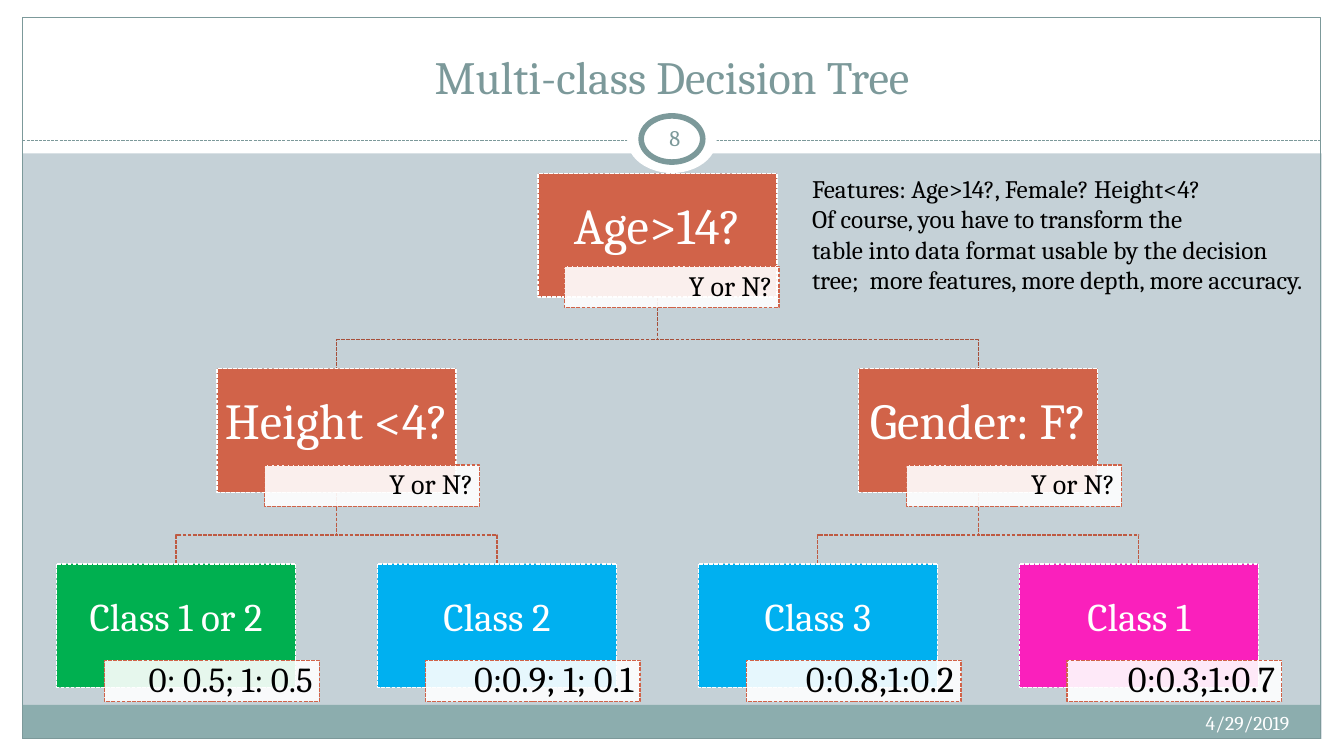
from lxml import etree
from pptx import Presentation
from pptx.dml.color import RGBColor
from pptx.enum.dml import MSO_LINE
from pptx.enum.shapes import MSO_CONNECTOR, MSO_SHAPE
from pptx.enum.text import MSO_ANCHOR, MSO_AUTO_SIZE, PP_ALIGN
from pptx.oxml.ns import qn
from pptx.util import Pt

RECTANGLE, OVAL = MSO_SHAPE.RECTANGLE, MSO_SHAPE.OVAL
LEFT, CENTER, RIGHT = PP_ALIGN.LEFT, PP_ALIGN.CENTER, PP_ALIGN.RIGHT
TOP, MIDDLE, BOTTOM = MSO_ANCHOR.TOP, MSO_ANCHOR.MIDDLE, MSO_ANCHOR.BOTTOM
DASHED = MSO_LINE.SQUARE_DOT

COLORS = {
    "background": "C5D1D7", "white": "FFFFFF", "black": "000000",
    "footer": "8CADAE", "frame": "7C999A", "question": "D16349",
    "root_link": "A74F3A", "link": "BE5A42",
    "green": "00B050", "blue": "00B0F0", "pink": "FA20BC",
}
FONT = "Cambria"
TREE_LEFT, TREE_TOP = 40.4, 124
COLUMN_STEP, ROW_STEP = 229.2, 139.4
NODE_WIDTH, NODE_HEIGHT = 170.8, 88.2
TAG_WIDTH, TAG_HEIGHT = 153.4, 29.6
ELBOW_DROP = 30.6
NODE_INSETS, TAG_INSETS = (2, 2, 2, 12), (4.6, 1, 4.6, 1)
ROOT_TAG_OFFSET, TAG_OFFSET = (18.9, 66.2), (34.2, 68.8)

NODES = [
    (1.5, 0, "question", "Age>14?", 36, "Y or N?", 20),
    (0.5, 1, "question", "Height <4?", 36, "Y or N?", 20),
    (0, 2, "green", "Class 1 or 2", 28, "0: 0.5; 1: 0.5", 25),
    (1, 2, "blue", "Class 2", 28, "0:0.9; 1; 0.1", 26),
    (2.5, 1, "question", "Gender: F?", 36, "Y or N?", 20),
    (2, 2, "blue", "Class 3", 28, "0:0.8;1:0.2", 26),
    (3, 2, "pink", "Class 1", 28, "0:0.3;1:0.7", 26),
]
BRANCHES = [
    (2.5, 1, (3, 2), "link"),
    (0.5, 1, (1, 0), "link"),
    (1.5, 0, (2.5, 0.5), "root_link"),
]
FEATURES = [
    "Features: Age>14?, Female? Height<4?",
    "Of course, you have to transform the",
    "table into data format usable by the decision",
    "tree;  more features, more depth, more accuracy.",
]


def rgb(name):
    """Return the named colour."""
    return RGBColor.from_string(COLORS[name])


def apply(target, values):
    """Set every attribute given in a dict of format values."""
    for name, value in values.items():
        setattr(target, name, value)


def style_line(line, color, width, dash=None):
    """Format a line, or hide it when no colour is given."""
    if color is None:
        line.fill.background()
        return
    line.color.rgb = rgb(color)
    apply(line, {"width": Pt(width), "dash_style": dash})


def write(shape, lines, size, color, align=CENTER, anchor=MIDDLE,
          insets=(7.2, 3.6, 7.2, 3.6), spacing=None, wrap=True):
    """Fill a shape with formatted paragraphs."""
    left, top, right, bottom = insets
    frame = shape.text_frame
    frame.text = "\n".join(lines)
    apply(frame, {
        "margin_left": Pt(left), "margin_top": Pt(top),
        "margin_right": Pt(right), "margin_bottom": Pt(bottom),
        "vertical_anchor": anchor, "word_wrap": wrap,
    })
    for paragraph in frame.paragraphs:
        apply(paragraph, {"alignment": align, "line_spacing": spacing})
        for run in paragraph.runs:
            apply(run.font, {"name": FONT, "size": Pt(size)})
            run.font.color.rgb = rgb(color)


def add_block(slide, kind, box, fill=None, line=None, width=0.75, dash=None):
    """Add a preset shape with its fill and line."""
    shape = slide.shapes.add_shape(kind, *map(Pt, box))
    shape.shadow.inherit = False
    if fill:
        shape.fill.solid()
        shape.fill.fore_color.rgb = rgb(fill)
    else:
        shape.fill.background()
    style_line(shape.line, line, width, dash)
    return shape


def add_text(slide, box, lines, size, color, **layout):
    """Add a text box."""
    shape = slide.shapes.add_textbox(*map(Pt, box))
    write(shape, lines, size, color, **layout)
    return shape


def add_frame(slide):
    """Draw the white margins, footer band, border and number ring."""
    margins = [(0, 528, 960, 12), (0, 0, 960, 109.6),
               (0, 0, 16, 540), (944, 0, 16, 540)]
    for box in margins:
        add_block(slide, RECTANGLE, box, "white")
    add_block(slide, RECTANGLE, (16, 503.4, 927.6, 24.4), "footer")
    add_block(slide, RECTANGLE, (16, 12.2, 927.6, 515.6), line="frame")
    rule = slide.shapes.add_connector(
        MSO_CONNECTOR.STRAIGHT, Pt(16), Pt(100.6), Pt(943.6), Pt(100.6))
    style_line(rule.line, "frame", 0.75, DASHED)
    etree.SubElement(rule.element.spPr, qn("a:effectLst"))
    add_block(slide, OVAL, (448, 75.6, 64, 48), "white")
    add_block(slide, OVAL, (458, 82.8, 44, 33), "white", "frame", 4)


def add_title(slide, text):
    """Place the title above the frame."""
    title = slide.shapes.title
    title.element.getparent().append(title.element)
    apply(title, {"left": Pt(32), "top": Pt(18),
                  "width": Pt(896), "height": Pt(60)})
    write(title, [text], 33, "frame", anchor=BOTTOM)


def node_position(column, row):
    """Return the top left corner of a tree node."""
    return TREE_LEFT + column * COLUMN_STEP, TREE_TOP + row * ROW_STEP


def add_branch(slide, column, row, child_column, color):
    """Draw an elbow from a node down to one child."""
    left, top = node_position(column, row)
    child_left, child_top = node_position(child_column, row + 1)
    start_x, end_x = left + NODE_WIDTH / 2, child_left + NODE_WIDTH / 2
    start_y = top + NODE_HEIGHT
    elbow_y = start_y + ELBOW_DROP
    builder = slide.shapes.build_freeform(Pt(start_x), Pt(start_y))
    corners = [(start_x, elbow_y), (end_x, elbow_y), (end_x, child_top)]
    builder.add_line_segments([(Pt(x), Pt(y)) for x, y in corners], close=False)
    elbow = builder.convert_to_shape()
    elbow.shadow.inherit = False
    elbow.fill.background()
    style_line(elbow.line, color, 0.9, DASHED)


def add_node(slide, column, row, fill, label, size, tag_label, tag_size):
    """Add a tree node with its overlapping translucent tag."""
    left, top = node_position(column, row)
    node = add_block(slide, RECTANGLE, (left, top, NODE_WIDTH, NODE_HEIGHT),
                     fill, "white", 0.9, DASHED)
    write(node, [label], size, "white", insets=NODE_INSETS, spacing=0.9)
    shift_x, shift_y = TAG_OFFSET if row else ROOT_TAG_OFFSET
    tag_box = (left + shift_x, top + shift_y, TAG_WIDTH, TAG_HEIGHT)
    tag = add_block(slide, RECTANGLE, tag_box, "white", "question", 0.9, DASHED)
    tag_color = tag.element.spPr.find(qn("a:solidFill")).find(qn("a:srgbClr"))
    etree.SubElement(tag_color, qn("a:alpha"), val="90000")
    write(tag, [tag_label], tag_size, "black", align=RIGHT,
          insets=TAG_INSETS, spacing=0.9)


def main():
    """Build the decision tree slide."""
    presentation = Presentation()
    apply(presentation, {"slide_width": Pt(960), "slide_height": Pt(540)})
    slide = presentation.slides.add_slide(presentation.slide_layouts[5])
    slide.background.fill.solid()
    slide.background.fill.fore_color.rgb = rgb("background")
    add_frame(slide)
    add_title(slide, "Multi-class Decision Tree")
    add_text(slide, (608, 504, 320, 28.8), ["4/29/2019"], 14, "white",
             align=RIGHT, anchor=TOP)
    add_text(slide, (458, 80.8, 48, 34.6), ["8"], 16, "frame",
             insets=(3.6, 3.6, 3.6, 3.6))
    for column, row, children, color in BRANCHES:
        for child_column in children:
            add_branch(slide, column, row, child_column, color)
    for node in NODES:
        add_node(slide, *node)
    features = add_text(slide, (573, 120.4, 405.4, 94.4), FEATURES, 18, "black",
                        align=LEFT, anchor=TOP, wrap=False)
    features.text_frame.auto_size = MSO_AUTO_SIZE.SHAPE_TO_FIT_TEXT
    presentation.save("out.pptx")


if __name__ == "__main__":
    main()
